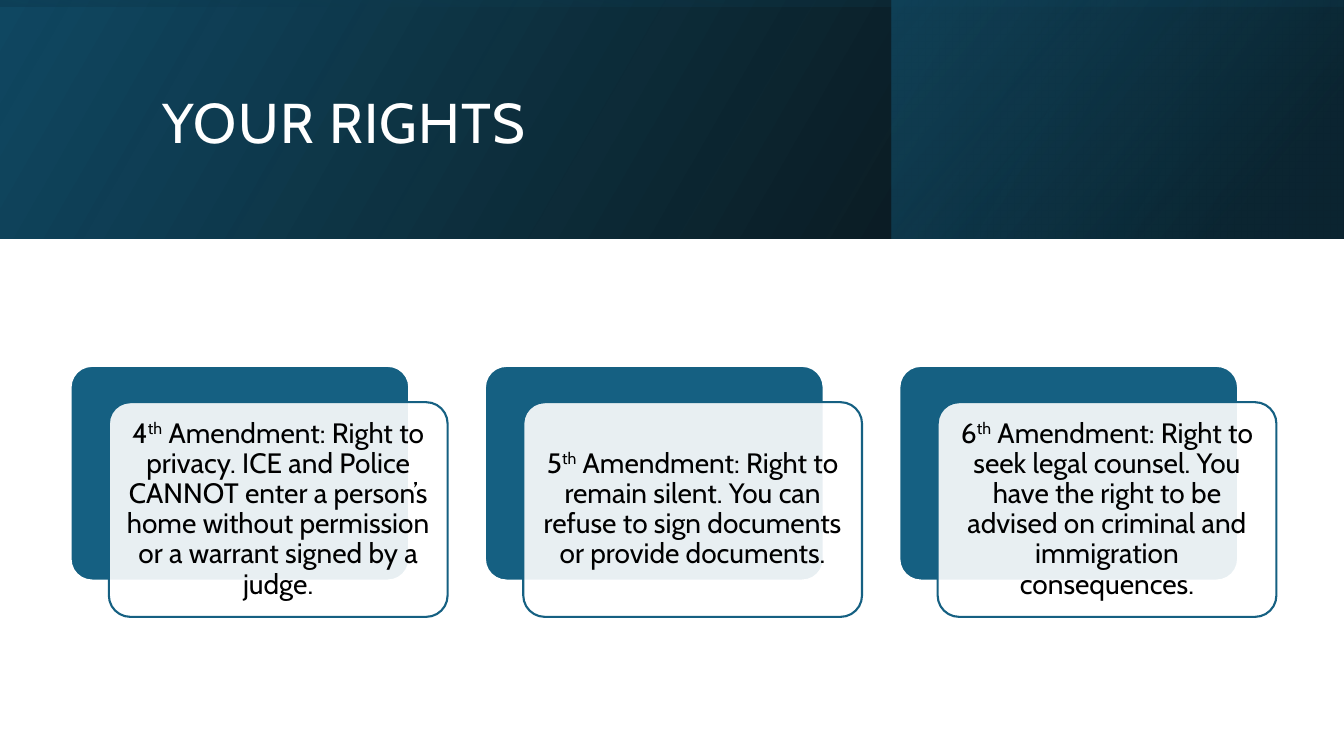
import pptx
import pptx.util
import pptx.dml.color
import pptx.enum.shapes
import pptx.enum.text
import pptx.oxml
import pptx.oxml.ns

Inches = pptx.util.Inches
Pt = pptx.util.Pt
qn = pptx.oxml.ns.qn
Shape = pptx.enum.shapes.MSO_SHAPE
Align = pptx.enum.text.PP_ALIGN
Anchor = pptx.enum.text.MSO_ANCHOR

PANELS = [
    ((0, 0, 13.33, 2.37), 0, 330, [(0, "000000", 96), (100, "104862", 100)]),
    ((8.84, 0, 4.48, 2.37), 0, 320, [(19, "0B3041", 68), (100, "156082", 48)]),
    ((5.48, -5.48, 2.37, 13.33), 270, 350, [(23, "104862", 16), (99, "000000", 45)]),
]
RIGHTS = [
    ("4", "privacy. ICE and Police CANNOT enter a person’s home without "
     "permission or a warrant signed by a judge."),
    ("5", "remain silent. You can refuse to sign documents or provide documents."),
    ("6", "seek legal counsel. You have the right to be advised on criminal "
     "and immigration consequences."),
]


def color(text):
    """Turn a hex string into a colour."""
    return pptx.dml.color.RGBColor.from_string(text)


def fade(node, share):
    """Set the opacity in percent of a colour element."""
    alpha = pptx.oxml.parse_xml(f'<a:alpha {pptx.oxml.ns.nsdecls("a")} val="{share * 1000}"/>')
    node.append(alpha)


def style(font, size, tint):
    """Set face, size and colour of a font."""
    font.name = "Cabin"
    font.size = Pt(size)
    font.color.rgb = color(tint)


def add_panel(slide, box, turn, angle, stops):
    """Add a mirrored rectangle with a two-stop translucent gradient."""
    panel = slide.shapes.add_shape(Shape.RECTANGLE, *map(Inches, box))
    panel.shadow.inherit = False
    panel.rotation = turn
    panel.element.spPr.find(qn("a:xfrm")).set("flipH", "1")
    panel.line.fill.background()
    panel.fill.gradient()
    panel.fill.gradient_angle = 360 - angle
    for stop, (place, tint, share) in zip(panel.fill.gradient_stops, stops):
        stop.position = place / 100
        stop.color.rgb = color(tint)
    nodes = panel.element.spPr.iter(qn("a:srgbClr"))
    for node, (place, tint, share) in zip(list(nodes), stops):
        fade(node, share)


def add_title(slide, text):
    """Place the title above the panels."""
    title = slide.shapes.title
    title.element.getparent().append(title.element)
    title.left, title.top, title.width, title.height = map(Inches, (1.51, 0.38, 10.63, 1.72))
    frame = title.text_frame
    frame.text = text
    frame.word_wrap = True
    frame.auto_size = pptx.enum.text.MSO_AUTO_SIZE.NONE
    frame.vertical_anchor = Anchor.MIDDLE
    line = frame.paragraphs[0]
    line.alignment = Align.LEFT
    line.line_spacing = 0.9
    style(line.runs[0].font, 40, "FFFFFF")
    line.runs[0].font._element.set("spc", "100")


def add_card(slide, left, top, fill, edge):
    """Add a rounded card and return it."""
    card = slide.shapes.add_shape(
        Shape.ROUNDED_RECTANGLE, Inches(left), Inches(top), Inches(3.36), Inches(2.13))
    card.shadow.inherit = False
    card.adjustments[0] = 0.1
    card.fill.solid()
    card.fill.fore_color.rgb = color(fill)
    card.line.color.rgb = color(edge)
    card.line.width = Pt(1.5)
    return card


def add_right(slide, left, number, text):
    """Add a back card and a front card that holds one amendment."""
    add_card(slide, left, 3.63, "156082", "FFFFFF")
    front = add_card(slide, left + 0.38, 3.99, "FFFFFF", "156082")
    fade(next(front.element.spPr.iter(qn("a:srgbClr"))), 90)
    frame = front.text_frame
    frame.word_wrap = True
    frame.vertical_anchor = Anchor.MIDDLE
    frame.margin_left = frame.margin_right = Inches(0.08)
    frame.margin_top = frame.margin_bottom = Inches(0.08)
    line = frame.paragraphs[0]
    line.alignment = Align.CENTER
    line.line_spacing = 0.9
    for part in (number, "th", " Amendment: Right to " + text):
        run = line.add_run()
        run.text = part
        style(run.font, 20, "000000")
    line.runs[1].font._element.set("baseline", "30000")


def main():
    """Build and save the slide."""
    deck = pptx.Presentation()
    deck.slide_width = Inches(13.33)
    deck.slide_height = Inches(7.5)
    slide = deck.slides.add_slide(deck.slide_layouts[5])
    for panel in PANELS:
        add_panel(slide, *panel)
    add_title(slide, "YOUR RIGHTS")
    for index, (number, text) in enumerate(RIGHTS):
        add_right(slide, 0.7 + 4.11 * index, number, text)
    deck.save("out.pptx")


if __name__ == "__main__":
    main()
